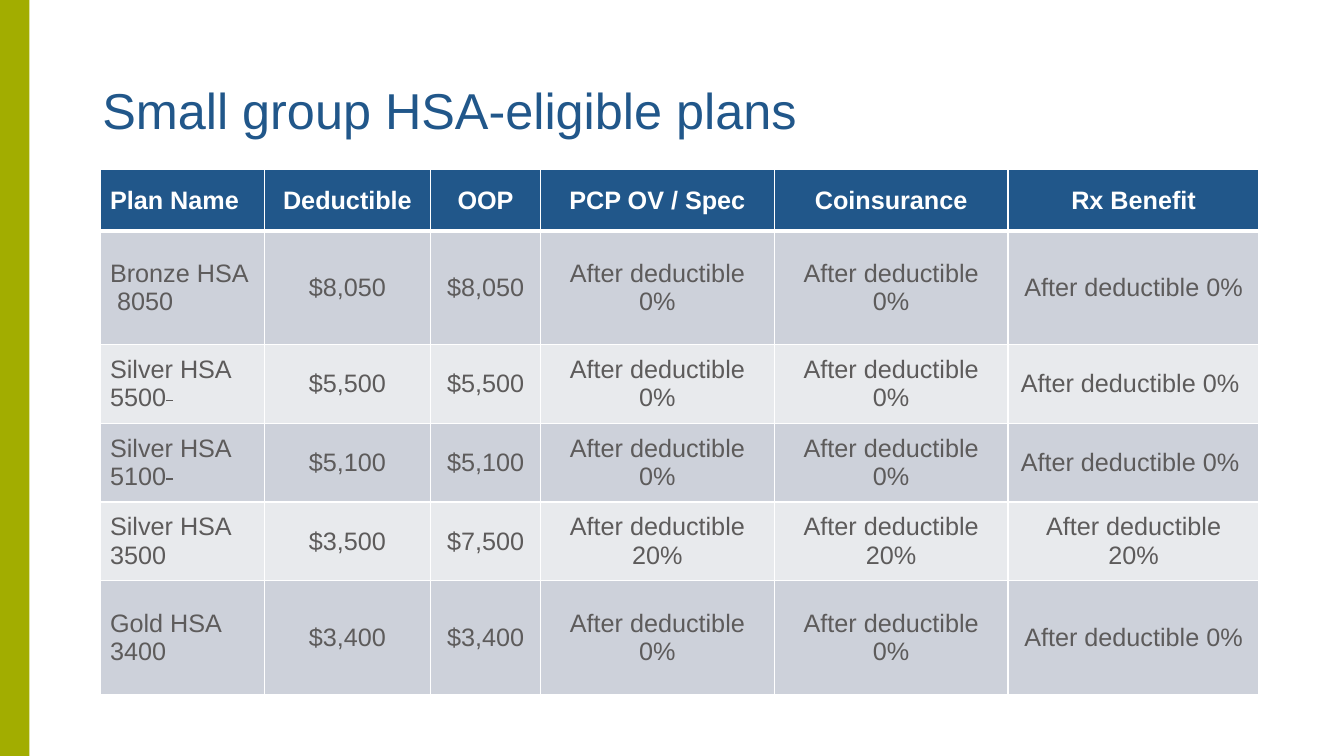
"""Build a slide with a table of small group HSA-eligible plans."""
import pptx
import pptx.dml.color
import pptx.enum.shapes
import pptx.enum.text
import pptx.oxml.ns
import pptx.util
import lxml.etree

Pt = pptx.util.Pt
BLUE, WHITE, GREY = "21578A", "FFFFFF", "5D5B5B"
BANDS = ["CDD1DA", "E8EAED"]


def paint(target, color):
    if hasattr(target, "solid"):
        target.solid()
        target = target.fore_color
    target.rgb = pptx.dml.color.RGBColor.from_string(color)


def add_border(cell, side, width):
    properties = cell._tc.get_or_add_tcPr()
    line = lxml.etree.SubElement(properties, pptx.oxml.ns.qn("a:ln" + side), w=str(Pt(width)))
    fill = lxml.etree.SubElement(line, pptx.oxml.ns.qn("a:solidFill"))
    lxml.etree.SubElement(fill, pptx.oxml.ns.qn("a:srgbClr"), val=WHITE)


presentation = pptx.Presentation()
presentation.slide_width = Pt(960)
presentation.slide_height = Pt(540)
slide = presentation.slides.add_slide(presentation.slide_layouts[6])

side_bar = slide.shapes.add_shape(
    pptx.enum.shapes.MSO_SHAPE.RECTANGLE, Pt(0), Pt(0), Pt(21), Pt(540))
side_bar.shadow.inherit = False
side_bar.line.fill.background()
paint(side_bar.fill, "A2AD00")

title = slide.shapes.add_textbox(Pt(66), Pt(28.8), Pt(828), Pt(104.4))
title.text_frame.word_wrap = True
title.text_frame.vertical_anchor = pptx.enum.text.MSO_ANCHOR.MIDDLE
title.text_frame.text = "Small group HSA-eligible plans"
title_paragraph = title.text_frame.paragraphs[0]
title_paragraph.line_spacing = 0.9
title_font = title_paragraph.runs[0].font
title_font.name = "Arial"
title_font.size = Pt(36)
paint(title_font.color, BLUE)

rows = [
    ["Plan Name", "Deductible", "OOP", "PCP OV / Spec", "Coinsurance", "Rx Benefit"],
    ["Bronze HSA  8050", "$8,050", "$8,050"] + ["After deductible 0%"] * 3,
    ["Silver HSA 5500", "$5,500", "$5,500"] + ["After deductible 0%"] * 2 + ["After deductible 0% "],
    ["Silver HSA\n5100", "$5,100", "$5,100"] + ["After deductible 0%"] * 2 + ["After deductible 0% "],
    ["Silver HSA 3500", "$3,500", "$7,500"] + ["After deductible 20%"] * 3,
    ["Gold HSA 3400", "$3,400", "$3,400"] + ["After deductible 0%"] * 3,
]
column_widths = [117.4, 118.8, 78.5, 167, 167, 179.3]
row_heights = [43.8, 81.2, 56.2, 56.2, 56.2, 81.2]
struck_space_rows = [2, 3]

table = slide.shapes.add_table(
    len(rows), len(column_widths), Pt(71.4), Pt(121.2),
    Pt(sum(column_widths)), Pt(sum(row_heights))).table
for column, width in zip(table.columns, column_widths):
    column.width = Pt(width)
for row, height in zip(table.rows, row_heights):
    row.height = Pt(height)

for row_index, texts in enumerate(rows):
    is_header = row_index == 0
    for column_index, text in enumerate(texts):
        cell = table.cell(row_index, column_index)
        cell.vertical_anchor = pptx.enum.text.MSO_ANCHOR.MIDDLE
        for side in "LRTB":
            at_header_edge = (row_index, side) in [(0, "B"), (1, "T")]
            add_border(cell, side, 3 if at_header_edge else 1)
        paint(cell.fill, BLUE if is_header else BANDS[(row_index - 1) % 2])
        cell.text_frame.text = text
        if column_index == 0 and row_index in struck_space_rows:
            struck_run = cell.text_frame.paragraphs[-1].add_run()
            struck_run.text = " "
            struck_run._r.get_or_add_rPr().set("strike", "sngStrike")
        for paragraph in cell.text_frame.paragraphs:
            if column_index > 0:
                paragraph.alignment = pptx.enum.text.PP_ALIGN.CENTER
            for run in paragraph.runs:
                run.font.name = "Arial"
                run.font.size = Pt(18)
                run.font.bold = is_header
                paint(run.font.color, WHITE if is_header else GREY)

presentation.save("out.pptx")
